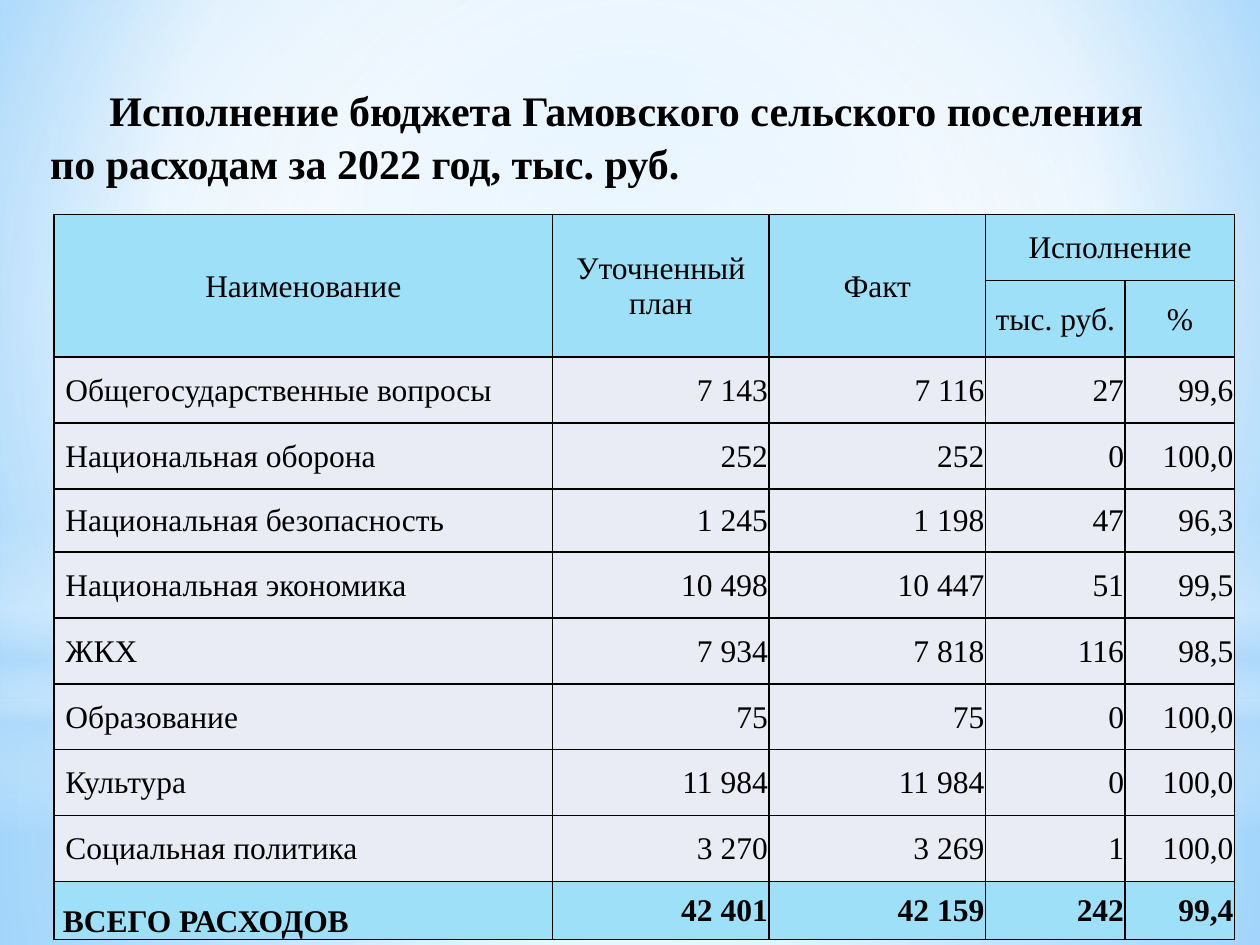
from dataclasses import dataclass

from lxml import etree
from pptx import Presentation
from pptx import util as u
from pptx.dml import color
from pptx.enum import shapes, text
from pptx.oxml import ns


@dataclass(frozen=True)
class Theme:
    """Colours and type sizes of the slide."""
    font: str = "Times New Roman"
    ink: str = "000000"
    header: str = "9EE0F8"
    body: str = "E9EBF5"
    white: str = "FFFFFF"
    haze: str = "B4DCFA"
    sky: str = "9ED5FF"
    deep: str = "5BB9FF"
    title_size: int = 24
    table_size: int = 18
    border: int = 1


@dataclass(frozen=True)
class Box:
    """A region given in EMU."""
    left: int
    top: int
    width: int
    height: int

    def region(self, left, top, width, height):
        """Return the box covering the given shares of this one."""
        return Box(self.left + round(self.width * left), self.top + round(self.height * top),
                   round(self.width * width), round(self.height * height))

    def place(self):
        """Return the position and size as a tuple."""
        return self.left, self.top, self.width, self.height


THEME = Theme()
COLUMNS = [3.96, 1.72, 1.72, 1.11, 0.87]
ROWS = [0.52, 0.44, 0.52, 0.52, 0.5, 0.52, 0.52, 0.52, 0.52, 0.52, 0.46]
HEADINGS = [
    ["Наименование", "Уточненный план", "Факт", "Исполнение", ""],
    ["", "", "", "тыс. руб.", "%"],
]
EXPENSES = [
    ["Общегосударственные вопросы", "7 143", "7 116", "27", "99,6"],
    ["Национальная оборона", "252", "252", "0", "100,0"],
    ["Национальная безопасность", "1 245", "1 198", "47", "96,3"],
    ["Национальная экономика", "10 498", "10 447", "51", "99,5"],
    ["ЖКХ", "7 934", "7 818", "116", "98,5"],
    ["Образование", "75", "75", "0", "100,0"],
    ["Культура", "11 984", "11 984", "0", "100,0"],
    ["Социальная политика", "3 270", "3 269", "1", "100,0"],
]
TOTAL = ["ВСЕГО РАСХОДОВ", "42 401", "42 159", "242", "99,4"]


def add_node(parent, tag, **attributes):
    """Append an XML element with the given attributes."""
    values = {name: str(value) for name, value in attributes.items()}
    return etree.SubElement(parent, ns.qn(tag), values)


def apply_gradient(fill, owner, stops, focus=None):
    """Fill with a circular gradient around focus, or a vertical one without it."""
    fill.gradient()
    gradient = owner.find(".//" + ns.qn("a:gradFill"))
    for child in list(gradient):
        gradient.remove(child)
    stop_list = add_node(gradient, "a:gsLst")
    for position, shade, opacity in stops:
        stop = add_node(stop_list, "a:gs", pos=position * 1000)
        add_node(add_node(stop, "a:srgbClr", val=shade), "a:alpha", val=opacity * 1000)
    if focus is None:
        add_node(gradient, "a:lin", ang=5400000, scaled=0)
    else:
        circle = add_node(gradient, "a:path", path="circle")
        edges = {side: share * 1000 for side, share in zip("ltrb", focus)}
        add_node(circle, "a:fillToRect", **edges)


def add_glow(page, box, kind, stops, focus=None):
    """Place one translucent layer of the backdrop."""
    glow = page.shapes.add_shape(kind, *box.place())
    glow.shadow.inherit = False
    glow.line.fill.background()
    apply_gradient(glow.fill, glow.element, stops, focus)


def add_backdrop(page, box):
    """Paint the sky gradient and its layers of light."""
    white, haze = THEME.white, THEME.haze
    centre = (50, 50, 50, 50)
    rectangle, oval = shapes.MSO_SHAPE.RECTANGLE, shapes.MSO_SHAPE.OVAL
    apply_gradient(page.background.fill, page.element,
                   [(0, THEME.sky, 100), (60, white, 100), (100, THEME.deep, 100)],
                   (20, 10, 20, 60))
    add_glow(page, box.region(0, 0.74, 1, 0.26), rectangle,
             [(0, white, 91), (37, white, 76), (100, haze, 79)], centre)
    add_glow(page, box.region(0, 0, 1, 0.74), rectangle,
             [(0, white, 89), (48, white, 62), (100, haze, 79)], centre)
    add_glow(page, box.region(0, 0.55, 1, 0.33), rectangle,
             [(0, white, 0), (29, white, 30), (45, haze, 40),
              (55, white, 26), (65, haze, 60), (100, white, 0)])
    add_glow(page, box.region(0, 0.23, 1, 0.74), oval,
             [(0, white, 100), (56, white, 0)], centre)


def add_span(para, wording, size, bold):
    """Add one run in the slide's typeface."""
    span = para.add_run()
    span.text = wording
    span.font.name = THEME.font
    span.font.size = u.Pt(size)
    span.font.bold = bold
    span.font.color.rgb = color.RGBColor.from_string(THEME.ink)


def add_title(page, box):
    """Write the two-line title with an indented first line."""
    frame = page.shapes.add_textbox(*box.place()).text_frame
    frame.word_wrap = True
    frame.margin_top = round(box.height * 0.06)
    para = frame.paragraphs[0]
    para.line_spacing = 1.05
    para._p.get_or_add_pPr().set("indent", str(round(box.width * 0.05)))
    add_span(para, "Исполнение бюджета Гамовского сельского поселения", THEME.title_size, True)
    para.add_line_break()
    add_span(para, "по расходам за 2022 год, тыс. руб.", THEME.title_size, True)


def style_cell(cell, shade):
    """Give a cell its borders, fill and tight margins."""
    properties = cell._tc.get_or_add_tcPr()
    for side in "LRTB":
        line = add_node(properties, "a:ln" + side, w=int(u.Pt(THEME.border)))
        add_node(add_node(line, "a:solidFill"), "a:srgbClr", val=THEME.ink)
    cell.fill.solid()
    cell.fill.fore_color.rgb = color.RGBColor.from_string(shade)
    cell.margin_left = cell.margin_right = cell.margin_top = u.Inches(0.01)
    cell.margin_bottom = 0
    cell.vertical_anchor = text.MSO_ANCHOR.MIDDLE


def add_budget_table(page, box):
    """Build the table of expenses with its merged headings and total row."""
    records = HEADINGS + EXPENSES + [TOTAL]
    last = len(records) - 1
    table = page.shapes.add_table(len(records), len(COLUMNS), *box.place()).table
    for column, share in zip(table.columns, COLUMNS):
        column.width = round(box.width * share / sum(COLUMNS))
    for row, share in zip(table.rows, ROWS):
        row.height = round(box.height * share / sum(ROWS))
    for r, record in enumerate(records):
        heading, total = r < len(HEADINGS), r == last
        for c, wording in enumerate(record):
            cell = table.cell(r, c)
            style_cell(cell, THEME.header if heading or total else THEME.body)
            para = cell.text_frame.paragraphs[0]
            if heading:
                para.alignment = text.PP_ALIGN.CENTER
            elif c:
                para.alignment = text.PP_ALIGN.RIGHT
            else:
                cell.margin_left = u.Inches(0.07 if total else 0.09)
            if wording:
                add_span(para, wording, THEME.table_size, total)
    table.cell(last, 0).vertical_anchor = text.MSO_ANCHOR.BOTTOM
    for c in range(3):
        table.cell(0, c).merge(table.cell(1, c))
    table.cell(0, 3).merge(table.cell(0, 4))


def main():
    """Build the budget slide and save the deck."""
    deck = Presentation()
    deck.slide_width, deck.slide_height = u.Inches(10), u.Inches(7.5)
    page = deck.slides.add_slide(deck.slide_layouts[6])
    canvas = Box(0, 0, deck.slide_width, deck.slide_height)
    add_backdrop(page, canvas)
    add_title(page, canvas.region(0.03, 0.08, 0.94, 0.12))
    add_budget_table(page, canvas.region(0.043, 0.227, 0.937, 0.745))
    deck.save("out.pptx")


if __name__ == "__main__":
    main()
